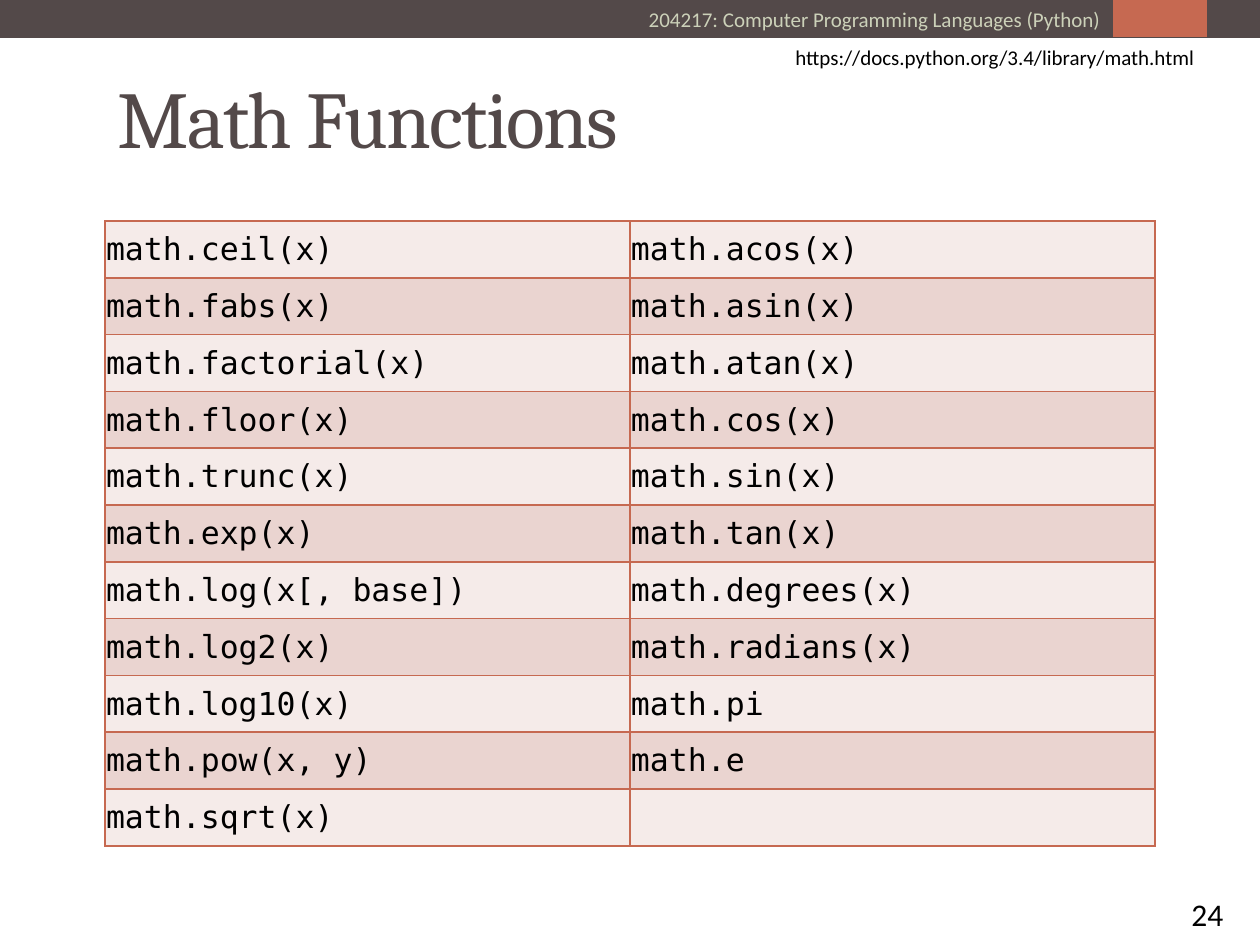
import pptx
import pptx.util
import pptx.dml.color
import pptx.enum.shapes
import pptx.enum.text
import pptx.oxml

PX = 914400 / 126
SHAPE = pptx.enum.shapes.MSO_SHAPE
ALIGN = pptx.enum.text.PP_ALIGN
MIDDLE = pptx.enum.text.MSO_ANCHOR.MIDDLE
DARK, RUST, SAGE, BLACK, WHITE = "534949", "C66951", "CCD1B9", "000000", "FFFFFF"
BANDS = "F5EBE9", "EAD4D0"
NS = "http://schemas.openxmlformats.org/drawingml/2006/main"

CALLS = [
    ("math.ceil(x)", "math.acos(x)"),
    ("math.fabs(x)", "math.asin(x)"),
    ("math.factorial(x)", "math.atan(x)"),
    ("math.floor(x)", "math.cos(x)"),
    ("math.trunc(x)", "math.sin(x)"),
    ("math.exp(x)", "math.tan(x)"),
    ("math.log(x[, base])", "math.degrees(x)"),
    ("math.log2(x)", "math.radians(x)"),
    ("math.log10(x)", "math.pi"),
    ("math.pow(x, y)", "math.e"),
    ("math.sqrt(x)", ""),
]


def emu(px):
    return pptx.util.Emu(round(px * PX))


def place(box):
    return [emu(n) for n in box]


def paint(part, color):
    """Give a fill, a line or a font its colour."""
    if hasattr(part, "solid"):
        part.solid()
        part = part.fore_color
    else:
        part = part.color
    part.rgb = pptx.dml.color.RGBColor.from_string(color)


def write(frame, text, size, face, color, align=ALIGN.LEFT):
    frame.text = text
    para = frame.paragraphs[0]
    para.alignment = align
    for run in para.runs:
        run.font.size = pptx.util.Pt(size)
        run.font.name = face
        paint(run.font, color)
    return para


def label(slide, box, *style):
    frame = slide.shapes.add_textbox(*place(box)).text_frame
    frame.word_wrap = True
    frame.vertical_anchor = MIDDLE
    return write(frame, *style)


def block(slide, box, color):
    shape = slide.shapes.add_shape(SHAPE.RECTANGLE, *place(box))
    shape.shadow.inherit = False
    paint(shape.fill, color)
    shape.line.fill.background()


def header(slide, box):
    """Dark bar with the course name and an accent block."""
    x, y, w, h = box
    block(slide, box, DARK)
    block(slide, (x + 1113, y, 94, h - 1), RUST)
    label(slide, (x, y + 2, 1113, 38),
          "204217: Computer Programming Languages (Python)",
          12, "Calibri", SAGE, ALIGN.RIGHT)


def heading(slide, box):
    """Slide title with the source address above its right end."""
    x, y, w, h = box
    para = label(slide, box, "Math Functions", 46, "Cambria", DARK)
    para.runs[0].font._element.set("spc", "-100")
    label(slide, (x + 136, y, 966, 38),
          "https://docs.python.org/3.4/library/math.html",
          12, "Calibri", BLACK, ALIGN.RIGHT)


def border(cell):
    props = cell._tc.get_or_add_tcPr()
    for n, side in enumerate(("lnL", "lnR", "lnT", "lnB")):
        line = pptx.oxml.parse_xml(
            f'<a:{side} xmlns:a="{NS}" w="12700"><a:solidFill>'
            f'<a:srgbClr val="{RUST}"/></a:solidFill></a:{side}>')
        props.insert(n, line)


def grid(slide, box):
    """Banded table of the functions."""
    x, y, w, h = box
    table = slide.shapes.add_table(len(CALLS), 2, *place(box)).table
    table.first_row = False
    for col in table.columns:
        col.width = emu(w / 2)
    for r, row in enumerate(CALLS):
        table.rows[r].height = emu(h / len(CALLS))
        for c, text in enumerate(row):
            cell = table.cell(r, c)
            cell.margin_left = cell.margin_right = cell.margin_top = emu(1)
            cell.margin_bottom = 0
            cell.vertical_anchor = MIDDLE
            paint(cell.fill, BANDS[r % 2])
            write(cell.text_frame, text, 18, "DejaVu Sans Mono", BLACK)
            border(cell)


def number(slide, box):
    """Page number between brackets."""
    shape = slide.shapes.add_shape(SHAPE.DOUBLE_BRACKET, *place(box))
    shape.shadow.inherit = False
    shape.adjustments[0] = 0.18
    shape.fill.background()
    paint(shape.line, WHITE)
    shape.line.width = pptx.util.Pt(1.5)
    frame = shape.text_frame
    frame.margin_left = frame.margin_right = 0
    frame.margin_top = frame.margin_bottom = 0
    frame.vertical_anchor = MIDDLE
    write(frame, "24", 18, "Calibri", BLACK, ALIGN.CENTER)


def main():
    deck = pptx.Presentation()
    deck.slide_width, deck.slide_height = emu(1260), emu(945)
    slide = deck.slides.add_slide(deck.slide_layouts[6])
    header(slide, (0, -2, 1260, 40))
    heading(slide, (105, 38, 1050, 157))
    grid(slide, (105, 221, 1050, 625))
    number(slide, (1155, 882, 105, 63))
    deck.save("out.pptx")


if __name__ == "__main__":
    main()
